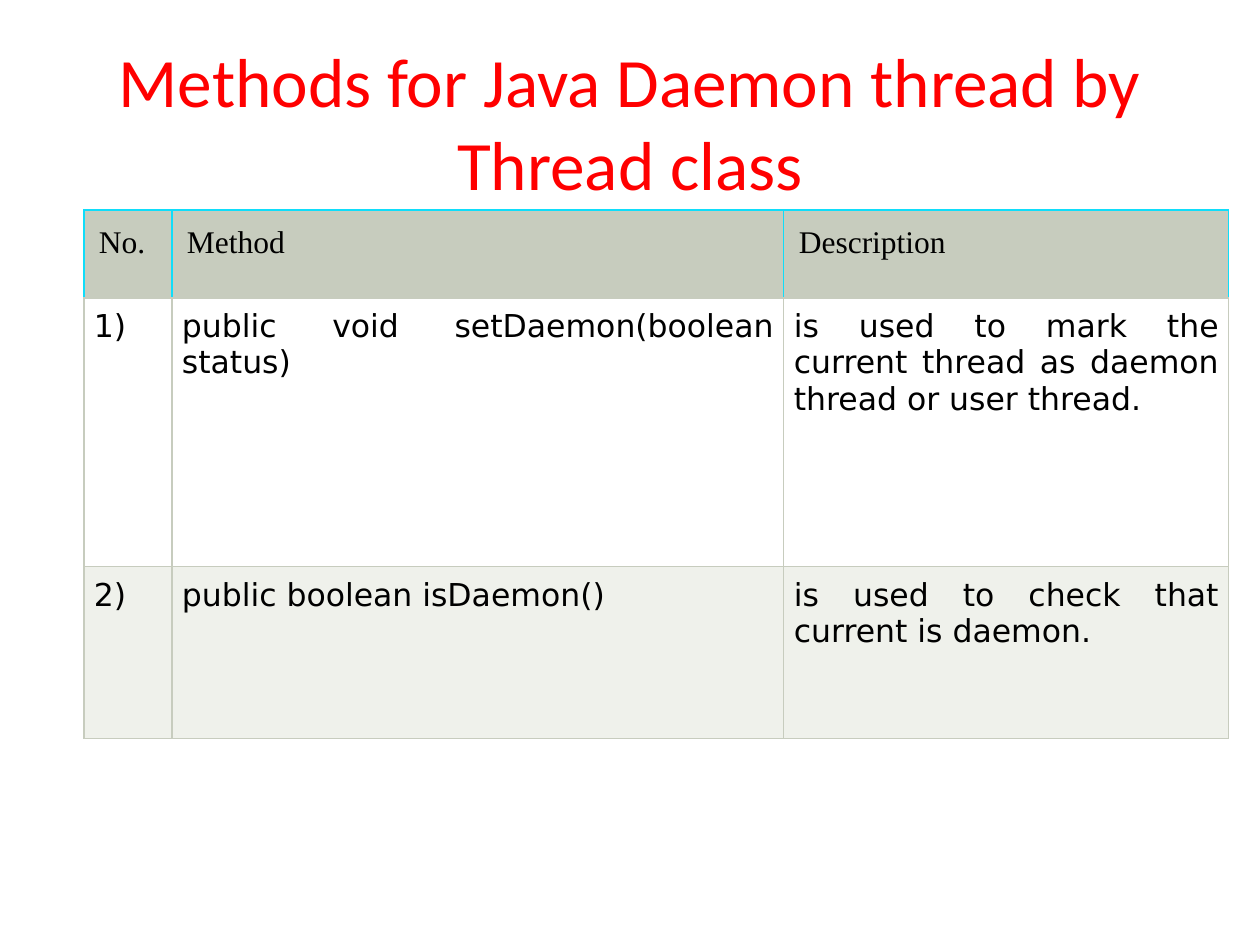
import dataclasses

import pptx
import pptx.dml.color
import pptx.enum.text
import pptx.oxml
import pptx.oxml.ns
import pptx.util

RGBColor = pptx.dml.color.RGBColor
PP_ALIGN = pptx.enum.text.PP_ALIGN

PX_PER_INCH = 126
RED = RGBColor(0xFF, 0x00, 0x00)
BLACK = RGBColor(0x00, 0x00, 0x00)
WHITE = RGBColor(0xFF, 0xFF, 0xFF)
SAGE = RGBColor(0xC7, 0xCC, 0xBE)
PALE_SAGE = RGBColor(0xEF, 0xF1, 0xEB)
CYAN = RGBColor(0x10, 0xDD, 0xFA)

COLUMN_WIDTHS = (88, 612, 445)


@dataclasses.dataclass(frozen=True)
class RowStyle:
    font: str
    align: PP_ALIGN
    inset: int
    edge: RGBColor


@dataclasses.dataclass(frozen=True)
class MethodRow:
    texts: tuple[str, str, str]
    height: int
    fill: RGBColor
    style: RowStyle


HEADER = RowStyle("Times New Roman", PP_ALIGN.LEFT, 15, CYAN)
BODY = RowStyle("DejaVu Sans", PP_ALIGN.JUSTIFY, 10, SAGE)

ROWS = (
    MethodRow(("No.", "Method", "Description"), 88, SAGE, HEADER),
    MethodRow(
        ("1)", "public void setDaemon(boolean status)",
         "is used to mark the current thread as daemon thread or user thread."),
        269, WHITE, BODY),
    MethodRow(
        ("2)", "public boolean isDaemon()",
         "is used to check that current is daemon."),
        172, PALE_SAGE, BODY),
)


def px(length: int) -> pptx.util.Emu:
    return pptx.util.Emu(round(length * 914400 / PX_PER_INCH))


def set_attributes(target: object, values: dict[str, object]) -> None:
    for name, value in values.items():
        setattr(target, name, value)


def write_text(tf, text: str, font: str, size: float, color: RGBColor,
               align: PP_ALIGN) -> None:
    p = tf.paragraphs[0]
    p.alignment = align
    r = p.add_run()
    r.text = text
    set_attributes(r.font, {"name": font, "size": pptx.util.Pt(size)})
    r.font.color.rgb = color


def set_borders(cell, edge: RGBColor, bottom: RGBColor) -> None:
    """Put the four border lines ahead of the fill, as the schema requires."""
    tc_pr = cell._tc.get_or_add_tcPr()
    borders = {"lnL": edge, "lnR": edge, "lnT": edge, "lnB": bottom}
    for i, (tag, color) in enumerate(borders.items()):
        tc_pr.insert(i, pptx.oxml.parse_xml(
            f'<a:{tag} {pptx.oxml.ns.nsdecls("a")} w="{pptx.util.Pt(0.75)}">'
            f'<a:solidFill><a:srgbClr val="{color}"/></a:solidFill></a:{tag}>'))


def add_title(s, text: str) -> None:
    tf = s.shapes.add_textbox(px(63), px(38), px(1134), px(158)).text_frame
    set_attributes(tf, {
        "word_wrap": True,
        "margin_top": 0,
        "margin_bottom": 0,
        "vertical_anchor": pptx.enum.text.MSO_ANCHOR.TOP,
    })
    write_text(tf, text, "Calibri", 39.6, RED, PP_ALIGN.CENTER)


def fill_cell(cell, text: str, row: MethodRow) -> None:
    style = row.style
    for side in ("left", "top", "right", "bottom"):
        setattr(cell, f"margin_{side}", px(style.inset))
    cell.fill.solid()
    cell.fill.fore_color.rgb = row.fill
    set_borders(cell, style.edge, SAGE)
    write_text(cell.text_frame, text, style.font, 18, BLACK, style.align)


def add_method_table(s, rows: tuple[MethodRow, ...]) -> None:
    table = s.shapes.add_table(
        len(rows), len(COLUMN_WIDTHS), px(84), px(210),
        px(sum(COLUMN_WIDTHS)), px(sum(row.height for row in rows))).table
    set_attributes(table, {"first_row": False, "horz_banding": False})
    for column, width in zip(table.columns, COLUMN_WIDTHS):
        column.width = px(width)
    for table_row, row in zip(table.rows, rows):
        table_row.height = px(row.height)
        for cell, text in zip(table_row.cells, row.texts):
            fill_cell(cell, text, row)


def main() -> None:
    prs = pptx.Presentation()
    set_attributes(prs, {"slide_width": px(1260), "slide_height": px(945)})
    s = prs.slides.add_slide(prs.slide_layouts[6])
    add_title(s, "Methods for Java Daemon thread by Thread class")
    add_method_table(s, ROWS)
    prs.save("out.pptx")


if __name__ == "__main__":
    main()
